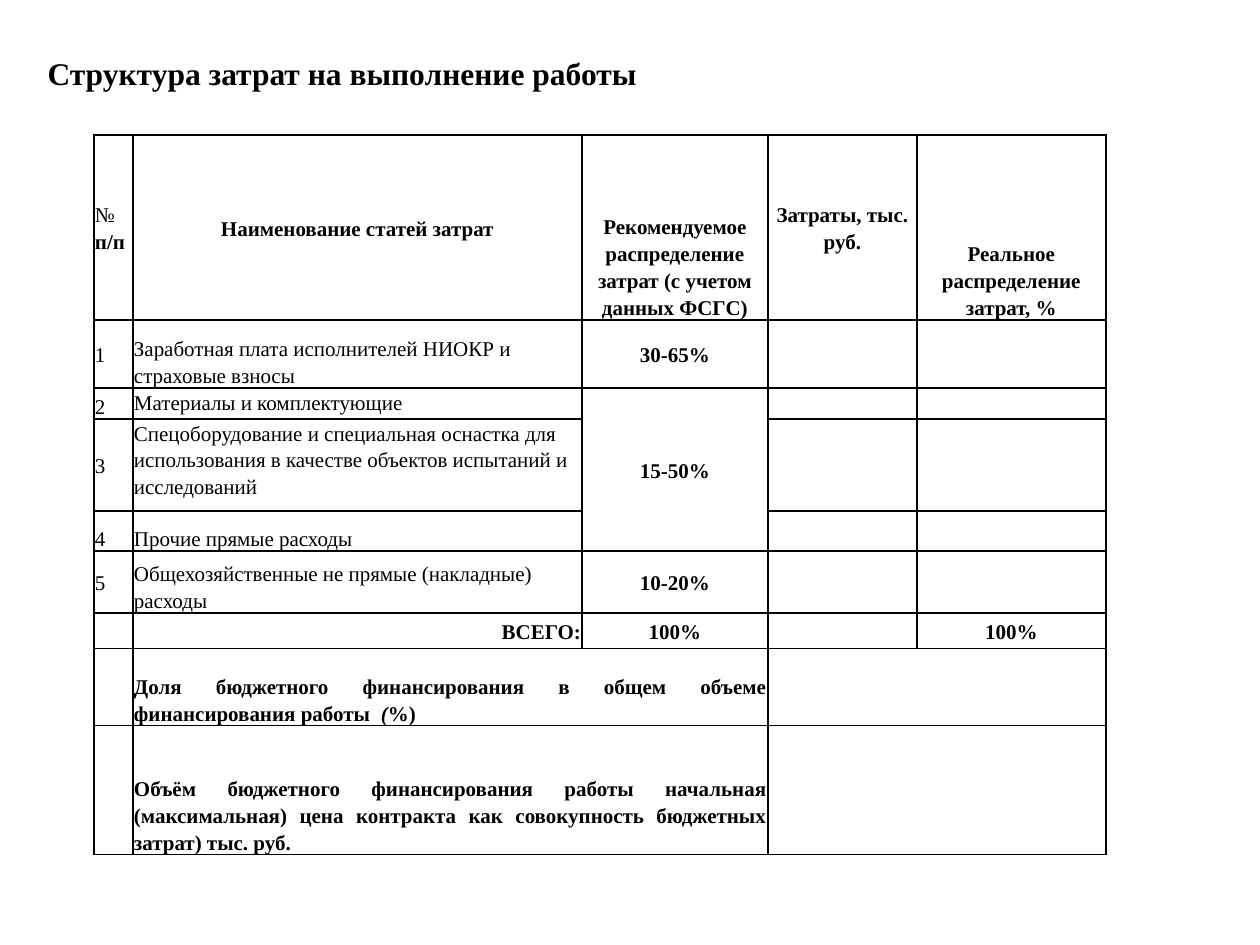
from lxml import etree
from pptx import Presentation, util as u
from pptx.dml.color import RGBColor
from pptx.enum.text import MSO_ANCHOR as A, MSO_AUTO_SIZE, PP_ALIGN as P
from pptx.oxml.ns import qn

PX = 914400 // 126
THEME = dict(font="Times New Roman", ink="000000", paper="FFFFFF",
             title=18, body=12, border=1)

TITLE = "Структура затрат на выполнение работы"
TITLE_BOX = (35, 43, 621, 55)
TABLE_AT = (94, 135)
COLS = [39, 125, 324, 186, 149, 189]
ROWS = [185, 68, 31, 92, 40, 62, 36, 77, 129]

# Cell styles: alignment, anchor, bold
NUM = (P.LEFT, A.MIDDLE, False)
NUM_LOW = (P.LEFT, A.BOTTOM, False)
ITEM = (P.LEFT, A.BOTTOM, False)
ITEM_TOP = (P.LEFT, A.TOP, False)
HEAD = (P.CENTER, A.MIDDLE, True)
HEAD_LOW = (P.CENTER, A.BOTTOM, True)
TOTAL = (P.RIGHT, A.MIDDLE, True)
SUMMARY = (P.JUSTIFY, A.BOTTOM, True)

# (row, column): (style, paragraphs); a run is text or (text, font changes)
CELLS = {
    (0, 0): (NUM, [["№"], [("п/п", {"bold": True})]]),
    (0, 1): (HEAD, [["Наименование статей затрат"]]),
    (0, 3): (HEAD_LOW, [["Рекомендуемое распределение затрат (с учетом данных ФСГС)"]]),
    (0, 4): (HEAD, [["Затраты, тыс. руб."]]),
    (0, 5): (HEAD_LOW, [["Реальное распределение затрат, %"]]),
    (1, 0): (NUM, [["1"]]),
    (1, 1): (ITEM, [["Заработная плата исполнителей НИОКР и страховые взносы"]]),
    (1, 3): (HEAD, [["30-65%"]]),
    (2, 0): (NUM_LOW, [["2"]]),
    (2, 1): (ITEM_TOP, [["Материалы и комплектующие"]]),
    (2, 3): (HEAD, [["15-50%"]]),
    (3, 0): (NUM, [["3"]]),
    (3, 1): (ITEM_TOP, [["Спецоборудование и специальная оснастка для использования "
                         "в качестве объектов испытаний и исследований"]]),
    (4, 0): (NUM_LOW, [["4"]]),
    (4, 1): (ITEM, [["Прочие прямые расходы"]]),
    (5, 0): (NUM, [["5"]]),
    (5, 1): (ITEM, [["Общехозяйственные не прямые (накладные) расходы"]]),
    (5, 3): (HEAD, [["10-20%"]]),
    (6, 2): (TOTAL, [["ВСЕГО:"]]),
    (6, 3): (HEAD, [["100%"]]),
    (6, 5): (HEAD, [["100%"]]),
    (7, 1): (SUMMARY, [["Доля бюджетного финансирования в общем объеме финансирования работы ",
                        (" (", {"italic": True}), "%)"]]),
    (8, 1): (SUMMARY, [["Объём бюджетного финансирования работы начальная (максимальная) "
                        "цена контракта как совокупность бюджетных затрат) тыс. руб."]]),
}
# First and last cell of each merged range
MERGES = [((r, 1), (r, 2)) for r in range(6)] + [((2, 3), (4, 3))]
MERGES += [((r, a), (r, b)) for r in (7, 8) for a, b in ((1, 3), (4, 5))]
OPEN_SIDES = {(6, 1): "R", (6, 2): "L"}


def add_run(p, text, **fmt):
    r = p.add_run()
    r.text = text
    r.font.color.rgb = RGBColor.from_string(THEME["ink"])
    for name, value in {"name": THEME["font"], **fmt}.items():
        setattr(r.font, name, value)


def draw_borders(cell, skip):
    tcPr = cell._tc.get_or_add_tcPr()
    for side in "LRTB":
        ln = etree.SubElement(tcPr, qn("a:ln" + side), w=str(u.Pt(THEME["border"])))
        if side in skip:
            etree.SubElement(ln, qn("a:noFill"))
        else:
            fill = etree.SubElement(ln, qn("a:solidFill"))
            etree.SubElement(fill, qn("a:srgbClr"), val=THEME["ink"])


def fill_cell(cell, style, paragraphs):
    align, anchor, bold = style
    cell.vertical_anchor = anchor
    for i, runs in enumerate(paragraphs):
        p = cell.text_frame.add_paragraph() if i else cell.text_frame.paragraphs[0]
        p.alignment, p.line_spacing = align, 1.15
        for run in runs:
            text, changes = (run, {}) if isinstance(run, str) else run
            add_run(p, text, **{"size": u.Pt(THEME["body"]), "bold": bold, **changes})


def add_title(slide):
    sp = slide.shapes.title
    sp.left, sp.top, sp.width, sp.height = (v * PX for v in TITLE_BOX)
    tf = sp.text_frame
    for name, value in dict(word_wrap=False, vertical_anchor=A.TOP,
                            auto_size=MSO_AUTO_SIZE.SHAPE_TO_FIT_TEXT).items():
        setattr(tf, name, value)
    p = tf.paragraphs[0]
    p.alignment, p.line_spacing, p.space_before = P.JUSTIFY, u.Pt(24.2), u.Pt(14.4)
    add_run(p, TITLE, size=u.Pt(THEME["title"]), bold=True)


def add_cost_table(slide):
    box = (*TABLE_AT, sum(COLS), sum(ROWS))
    table = slide.shapes.add_table(len(ROWS), len(COLS), *(v * PX for v in box)).table
    table.first_row = table.horz_banding = False
    for col, width in zip(table.columns, COLS):
        col.width = width * PX
    for row, height in zip(table.rows, ROWS):
        row.height = height * PX
    for first, last in MERGES:
        table.cell(*first).merge(table.cell(*last))
    for r in range(len(ROWS)):
        for c in range(len(COLS)):
            cell = table.cell(r, c)
            draw_borders(cell, OPEN_SIDES.get((r, c), ""))
            cell.fill.solid()
            cell.fill.fore_color.rgb = RGBColor.from_string(THEME["paper"])
            cell.margin_left = cell.margin_right = PX
            cell.margin_top = cell.margin_bottom = 0
            if (r, c) in CELLS:
                fill_cell(cell, *CELLS[r, c])
            else:  # keeps an empty cell from stretching its row
                end = cell.text_frame.paragraphs[0]._p.get_or_add_endParaRPr()
                end.set("sz", str(THEME["body"] * 100))


def main():
    prs = Presentation()
    prs.slide_width, prs.slide_height = u.Inches(10), u.Inches(7.5)
    slide = prs.slides.add_slide(prs.slide_layouts[5])
    add_title(slide)
    add_cost_table(slide)
    prs.save("out.pptx")


if __name__ == "__main__":
    main()
